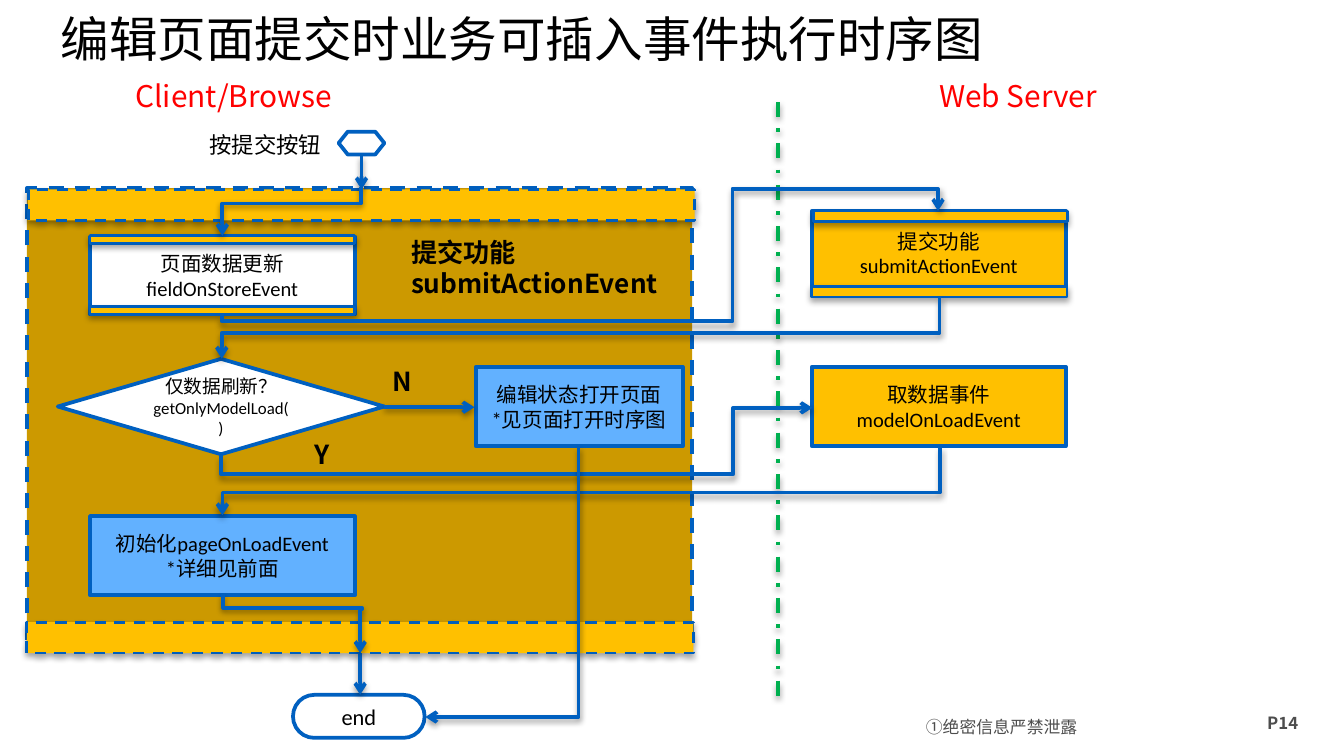
from lxml import etree
from pptx import Presentation
from pptx.dml.color import RGBColor
from pptx.enum.dml import MSO_LINE
from pptx.enum.shapes import MSO_CONNECTOR, MSO_SHAPE
from pptx.enum.text import MSO_ANCHOR, MSO_AUTO_SIZE, PP_ALIGN
from pptx.oxml import parse_xml
from pptx.oxml.ns import nsdecls, qn
from pptx.util import Pt

PX = 9144
rgb = RGBColor.from_string
RECT = MSO_SHAPE.RECTANGLE
DECISION = MSO_SHAPE.FLOWCHART_DECISION
TERMINATOR = MSO_SHAPE.FLOWCHART_TERMINATOR
PREPARATION = MSO_SHAPE.FLOWCHART_PREPARATION
STRAIGHT, ELBOW = MSO_CONNECTOR.STRAIGHT, MSO_CONNECTOR.ELBOW
DASH, DASH_DOT = MSO_LINE.DASH, MSO_LINE.DASH_DOT
LEFT, CENTER, JUSTIFY = PP_ALIGN.LEFT, PP_ALIGN.CENTER, PP_ALIGN.JUSTIFY
TOP, MIDDLE = MSO_ANCHOR.TOP, MSO_ANCHOR.MIDDLE
NO_FIT, GROW = MSO_AUTO_SIZE.NONE, MSO_AUTO_SIZE.SHAPE_TO_FIT_TEXT
NOTO, CALIBRI = "Noto Sans CJK SC", "Calibri"
BLUE, STRIPE_BLUE, SKY = "0060C0", "005EBC", "62B1FF"
AMBER, OCHRE, WHITE, BLACK = "FFC000", "CC9900", "FFFFFF", "000000"
RED, GREEN, GRAY = "FF0000", "00B050", "4D4D4D"


def write(frame, lines, size, font=NOTO, color=BLACK, bold=False, align=LEFT, anchor=TOP):
    frame.word_wrap = True
    frame.vertical_anchor = anchor
    frame.text = "\n".join(lines)
    for paragraph in frame.paragraphs:
        paragraph.alignment = align
        for run in paragraph.runs:
            run.font.size = Pt(size)
            run.font.name = font
            run.font.bold = bold
            run.font.color.rgb = rgb(color)
            east_asian = etree.SubElement(run.font._element, qn("a:ea"))
            east_asian.set("typeface", NOTO)


def cast_shadow(properties, distance, opacity):
    for effects in properties.findall(qn("a:effectLst")):
        properties.remove(effects)
    properties.append(parse_xml(
        f'<a:effectLst {nsdecls("a")}><a:outerShdw blurRad="40000" dist="{distance}" '
        f'dir="5400000" rotWithShape="0"><a:srgbClr val="{BLACK}">'
        f'<a:alpha val="{opacity}"/></a:srgbClr></a:outerShdw></a:effectLst>'))


deck = Presentation()
deck.slide_width = 1000 * PX
deck.slide_height = deck.slide_width * 9 // 16
slide = deck.slides.add_slide(deck.slide_layouts[5])
shapes = slide.shapes

title = shapes.title
title.left, title.top, title.width, title.height = 35 * PX, 0, 780 * PX, 57 * PX
write(title.text_frame, ["编辑页面提交时业务可插入事件执行时序图"], 26, anchor=MIDDLE)
title.text_frame.auto_size = NO_FIT

notice = shapes.add_textbox(681 * PX, 528 * PX, 177 * PX, 27 * PX).text_frame
notice.margin_left = notice.margin_right = 8 * PX
notice.margin_top = notice.margin_bottom = PX
write(notice, ["①绝密信息严禁泄露"], 9, color=GRAY, align=JUSTIFY)
notice.paragraphs[0].line_spacing = Pt(14)

steps = [
    (RECT, 20, 140, 495, 343, OCHRE, DASH, []),
    (DECISION, 43, 267, 243, 71, WHITE, None, ["仅数据刷新？", "getOnlyModelLoad()"]),
    (RECT, 67, 384, 197, 59, SKY, None, ["初始化pageOnLoadEvent", "*详细见前面"]),
    (TERMINATOR, 218, 517, 98, 32, WHITE, None, ["end"]),
    (RECT, 604, 273, 189, 59, AMBER, None, ["取数据事件", "modelOnLoadEvent"]),
    (RECT, 67, 176, 197, 58, WHITE, None, ["页面数据更新", "fieldOnStoreEvent"]),
    (RECT, 604, 157, 189, 63, AMBER, None, ["提交功能", "submitActionEvent"]),
    (RECT, 354, 273, 154, 59, SKY, None, ["编辑状态打开页面", "*见页面打开时序图"]),
    (PREPARATION, 252, 98, 34, 17, WHITE, None, []),
]
for kind, x, y, w, h, fill, dash, lines in steps:
    step = shapes.add_shape(kind, x * PX, y * PX, w * PX, h * PX)
    step.shadow.inherit = False
    step.fill.solid()
    step.fill.fore_color.rgb = rgb(fill)
    step.line.color.rgb = rgb(BLUE)
    step.line.width = Pt(2)
    step.line.dash_style = dash
    if lines:
        size = {DECISION: 10, TERMINATOR: 12}.get(kind, 11)
        write(step.text_frame, lines, size, CALIBRI, align=CENTER, anchor=MIDDLE)
    if kind == DECISION:
        step.text_frame.paragraphs[1].runs[0].font.size = Pt(9)

stripes = [
    (20, 463, 496, 23, DASH),
    (21, 141, 496, 23, DASH),
    (67, 175, 197, 6, None),
    (67, 228, 197, 6, None),
    (604, 213, 190, 8, None),
    (605, 157, 189, 8, None),
]
for x, y, w, h, dash in stripes:
    stripe = shapes.add_shape(RECT, x * PX, y * PX, w * PX, h * PX)
    stripe.fill.solid()
    stripe.fill.fore_color.rgb = rgb(AMBER)
    stripe.line.color.rgb = rgb(STRIPE_BLUE)
    stripe.line.width = Pt(1.5)
    stripe.line.dash_style = dash
    cast_shadow(stripe._element.spPr, 23000, 35000)

captions = [
    (933, 525, 56, 25, ["P14"], 9, GRAY, True),
    (91, 53, 173, 37, ["Client/Browse"], 16, RED, False),
    (689, 53, 172, 37, ["Web Server"], 16, RED, False),
    (224, 321, 37, 34, ["Y"], 14, BLACK, True),
    (282, 267, 37, 34, ["N"], 14, BLACK, True),
    (296, 171, 212, 57, ["提交功能", "submitActionEvent"], 14, BLACK, True),
    (146, 93, 106, 30, ["按提交按钮"], 12, BLACK, False),
]
for x, y, w, h, lines, size, color, bold in captions:
    caption = shapes.add_textbox(x * PX, y * PX, w * PX, h * PX).text_frame
    write(caption, lines, size, color=color, bold=bold)
    caption.auto_size = GROW

flows = [
    (579, 76, 579, 525, 0, 0, []),
    (470, 462, 393, -71, 90, 5, [-67, 713, 1213]),
    (409, -23, 455, 511, 90, 3, [583]),
    (286, 303, 353, 303, 0, 0, []),
    (402, 541, 367, 101, 90, 4, [-415, 866]),
    (407, 91, 458, 625, 90, 3, [666]),
    (273, 376, 474, 490, 90, 2, []),
    (268, 486, 268, 517, 0, 0, []),
    (239, 413, 195, 515, 270, 5, [232, 1013, 256]),
    (269, 116, 269, 141, 0, 0, []),
    (235, 209, 199, 106, 270, 3, [330]),
]
for x1, y1, x2, y2, angle, bend_kind, bends in flows:
    kind = ELBOW if bend_kind else STRAIGHT
    flow = shapes.add_connector(kind, x1 * PX, y1 * PX, x2 * PX, y2 * PX)
    properties = flow._element.spPr
    if bend_kind:
        properties.find(qn("a:xfrm")).set("rot", str(angle * 60000))
        geometry = properties.find(qn("a:prstGeom"))
        geometry.set("prst", f"bentConnector{bend_kind}")
        adjustments = geometry.find(qn("a:avLst"))
        for number, bend in enumerate(bends, 1):
            guide = etree.SubElement(adjustments, qn("a:gd"))
            guide.set("name", f"adj{number}")
            guide.set("fmla", f"val {bend * 100}")
    is_divider = x1 == 579
    flow.line.color.rgb = rgb(GREEN if is_divider else BLUE)
    flow.line.width = Pt(2)
    if is_divider:
        flow.line.dash_style = DASH_DOT
    else:
        etree.SubElement(properties.find(qn("a:ln")), qn("a:tailEnd")).set("type", "arrow")
    cast_shadow(properties, 20000, 38000)

deck.save("out.pptx")
